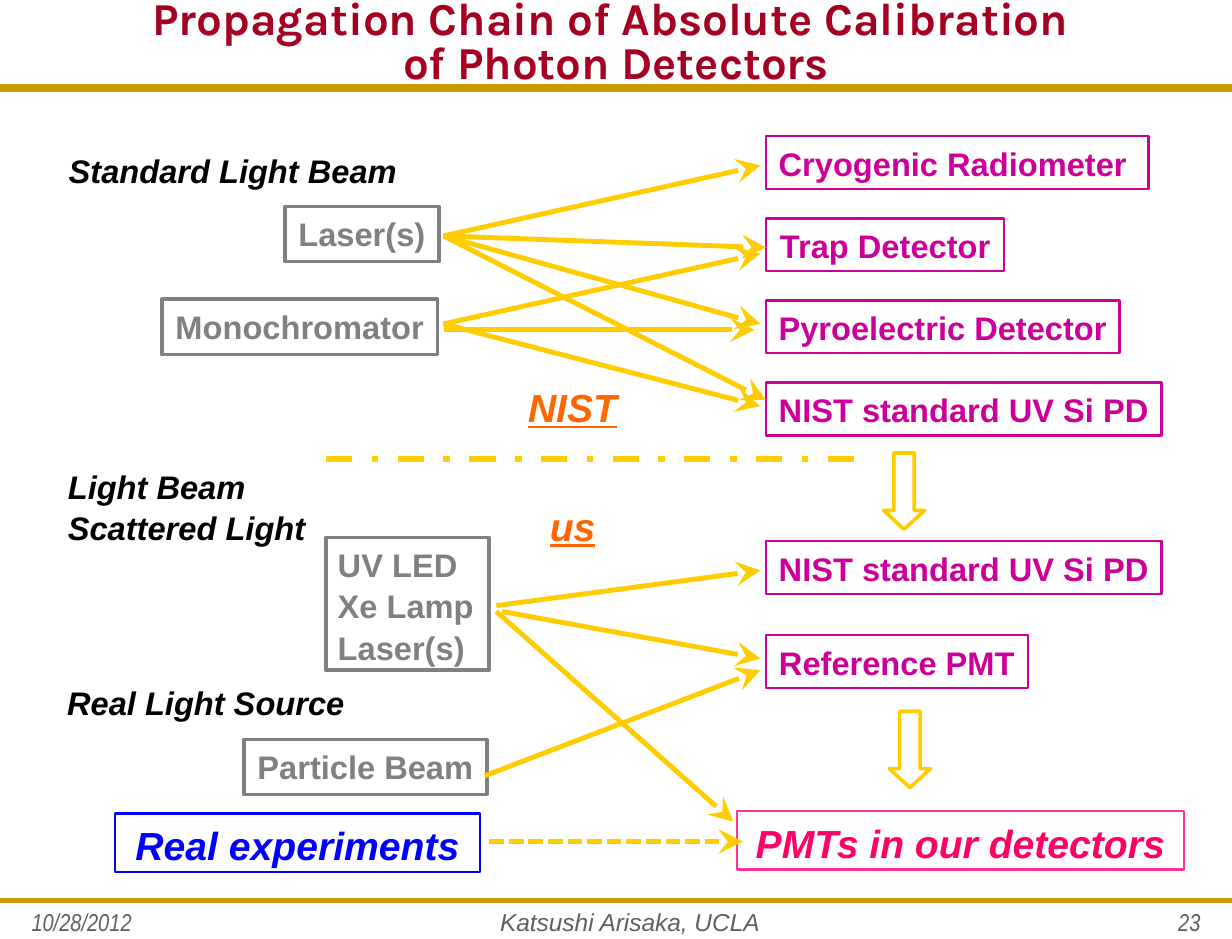
from lxml import etree
from pptx import Presentation
from pptx import util as u
from pptx.dml.color import RGBColor
from pptx.enum import dml, shapes, text
from pptx.oxml.ns import qn

LEFT, CENTER, RIGHT = text.PP_ALIGN.LEFT, text.PP_ALIGN.CENTER, text.PP_ALIGN.RIGHT
GOLD, YELLOW, GRAY, MAGENTA = "CC9900", "FFCC00", "808080", "CC0099"
BLACK, ORANGE, FOOTER_GRAY = "000000", "FF6600", "606060"


def color(value):
    return RGBColor.from_string(value)


class Diagram:
    def __init__(self, slide, font="Arial"):
        self.slide = slide
        self.font = font

    def style_text(self, paragraph, size, ink, align=CENTER, font=None,
                   bold=True, italic=False, underline=False):
        paragraph.alignment = align
        face = paragraph.font
        face.name = font or self.font
        face.size = u.Pt(size)
        face.bold, face.italic = bold, italic
        if underline:
            face.underline = True
        face.color.rgb = color(ink)

    def title(self, words):
        title = self.slide.shapes.title
        title.left, title.top = u.Inches(0), u.Inches(0)
        title.width, title.height = u.Inches(10.5), u.Inches(0.75)
        frame = title.text_frame
        frame.text = words
        frame.vertical_anchor = text.MSO_ANCHOR.MIDDLE
        frame.auto_size = text.MSO_AUTO_SIZE.NONE
        paragraph = frame.paragraphs[0]
        self.style_text(paragraph, 28, "A50021", font="Karla")
        paragraph.line_spacing = 0.8
        paragraph.space_before = u.Pt(0)

    def footer(self, words, left, width, align, font):
        box = self.slide.shapes.add_textbox(
            u.Inches(left), u.Inches(7.68), u.Inches(width), u.Inches(0.32))
        frame = box.text_frame
        frame.word_wrap = True
        frame.text = words
        self.style_text(frame.paragraphs[0], 15, FOOTER_GRAY, align, font, False, True)

    def fill_text(self, shape, words, size, ink, **style):
        frame = shape.text_frame
        frame.word_wrap = False
        frame.auto_size = text.MSO_AUTO_SIZE.SHAPE_TO_FIT_TEXT
        frame.vertical_anchor = text.MSO_ANCHOR.TOP
        frame.text = words
        for paragraph in frame.paragraphs:
            self.style_text(paragraph, size, ink, **style)
            paragraph.line_spacing = 1.05

    def label(self, words, left, top, width, height, size=20, ink=BLACK, **style):
        box = self.slide.shapes.add_textbox(*map(u.Inches, (left, top, width, height)))
        self.fill_text(box, words, size, ink, italic=True, **style)

    def outline(self, kind, left, top, width, height, ink, weight):
        shape = self.slide.shapes.add_shape(
            kind, *map(u.Inches, (left, top, width, height)))
        shape.shadow.inherit = False
        shape.fill.background()
        shape.line.color.rgb = color(ink)
        shape.line.width = u.Pt(weight)
        return shape

    def box(self, words, left, top, width, height, border, weight=1.5,
            size=20, ink=None, **style):
        shape = self.outline(shapes.MSO_SHAPE.RECTANGLE, left, top, width, height,
                             border, weight)
        self.fill_text(shape, words, size, ink or border, **style)

    def down_arrow(self, left, top):
        arrow = self.outline(shapes.MSO_SHAPE.DOWN_ARROW, left, top, 0.35, 0.65,
                             YELLOW, 2.25)
        arrow.adjustments[1] = 0.46

    def line(self, start, end, ink=YELLOW, weight=3, dash=None, arrow=False):
        line = self.slide.shapes.add_connector(
            shapes.MSO_CONNECTOR.STRAIGHT, *map(u.Inches, (*start, *end)))
        line.line.color.rgb = color(ink)
        line.line.width = u.Pt(weight)
        if dash:
            line.line.dash_style = dash
        properties = line._element.spPr
        if arrow:
            etree.SubElement(properties.find(qn("a:ln")), qn("a:tailEnd"),
                             type="stealth", w="lg", len="lg")
        etree.SubElement(properties, qn("a:effectLst"))


def main():
    deck = Presentation()
    deck.slide_width, deck.slide_height = u.Inches(10.5), u.Inches(8)
    chain = Diagram(deck.slides.add_slide(deck.slide_layouts[5]))

    chain.line((0, 0.75), (10.5, 0.75), GOLD, 4.5)
    chain.line((0, 7.67), (10.5, 7.67), GOLD)
    chain.footer("10/28/2012", 0.17, 2.08, LEFT, "Arial Narrow")
    chain.footer("Katsushi Arisaka, UCLA", 2.33, 6.08, CENTER, "Arial")
    chain.footer("23", 8.5, 1.83, RIGHT, "Arial Narrow")
    chain.title("Propagation Chain of Absolute Calibration \vof Photon Detectors")

    detectors = [
        ("Cryogenic Radiometer ", 1.16, 3.26),
        ("Trap Detector", 1.86, 2.03),
        ("Pyroelectric Detector", 2.56, 3.01),
        ("NIST standard UV Si PD", 3.26, 3.37),
        ("NIST standard UV Si PD", 4.61, 3.37),
        ("Reference PMT", 5.41, 2.23),
    ]
    for name, top, width in detectors:
        chain.box(name, 6.53, top, width, 0.45, MAGENTA)

    sources = [
        ("Laser(s)", 2.43, 1.76, 1.31),
        ("Monochromator", 1.38, 2.55, 2.35),
        ("Particle Beam", 2.08, 6.3, 2.07),
    ]
    for name, left, top, width in sources:
        chain.box(name, left, top, width, 0.47, GRAY, 2.25)
    chain.box("UV LED\nXe Lamp\nLaser(s)", 2.78, 4.58, 1.39, 1.13, GRAY, 2.25,
              align=LEFT)
    chain.box("Real experiments", 0.98, 6.93, 3.11, 0.5, "0000FF", size=24, italic=True)
    chain.box("PMTs in our detectors", 6.28, 6.91, 3.81, 0.5, "FF3399", size=24,
              ink="FF0066", italic=True)

    chain.label("Standard Light Beam ", 0.45, 1.22, 3.07, 0.43)
    chain.label("Light Beam\nScattered Light", 0.48, 3.91, 2.31, 0.77, align=LEFT)
    chain.label("Real Light Source", 0.43, 5.75, 2.65, 0.44)
    chain.label("NIST", 4.4, 3.2, 0.96, 0.5, 24, ORANGE, underline=True)
    chain.label("us", 4.54, 4.21, 0.68, 0.5, 24, ORANGE, underline=True)

    chain.line((2.78, 3.91), (7.33, 3.91), weight=4, dash=dml.MSO_LINE.DASH_DOT)
    chain.down_arrow(7.53, 3.86)
    chain.down_arrow(7.58, 6.06)

    laser, monochromator = (3.78, 2.01), (3.78, 2.76)
    beams = [
        (laser, (6.48, 1.41)),
        (laser, (6.53, 2.11)),
        (laser, (6.48, 2.76)),
        (laser, (6.53, 3.41)),
        (monochromator, (6.48, 2.16)),
        ((3.78, 2.81), (6.43, 2.81)),
        (monochromator, (6.48, 3.46)),
        ((4.23, 5.16), (6.48, 4.86)),
        ((4.28, 5.21), (6.48, 5.61)),
        ((4.23, 5.21), (6.25, 7)),
        ((4.13, 6.61), (6.48, 5.71)),
    ]
    for start, end in beams:
        chain.line(start, end, arrow=True)
    chain.line((4.17, 7.17), (6.33, 7.17), dash=dml.MSO_LINE.SQUARE_DOT, arrow=True)

    deck.save("out.pptx")


if __name__ == "__main__":
    main()
